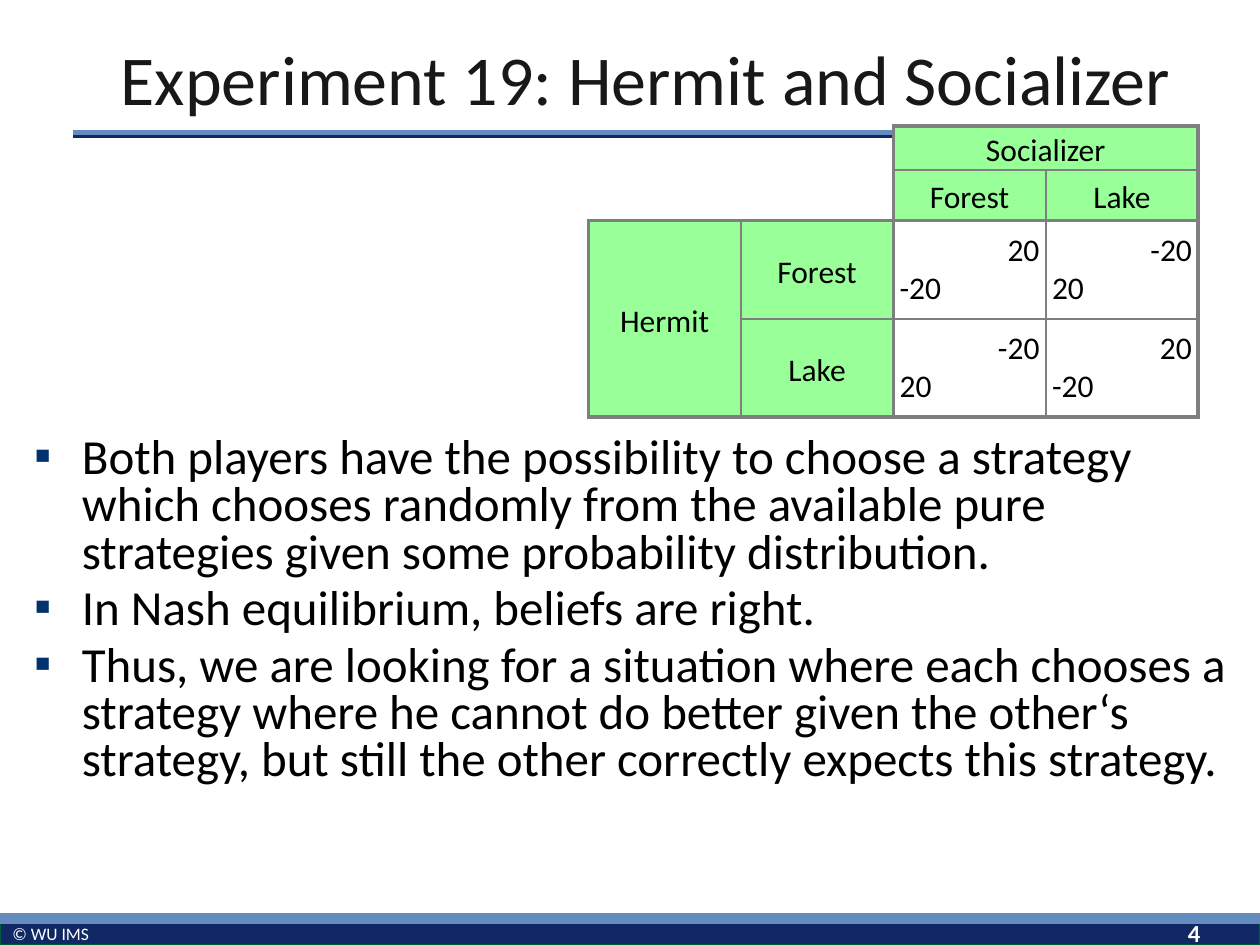
"""Build the Hermit and Socializer slide with its payoff table."""
from dataclasses import dataclass

from lxml.etree import SubElement
from pptx import Presentation
from pptx.dml.color import RGBColor
from pptx.enum.shapes import MSO_CONNECTOR as Connector, MSO_SHAPE as Shape
from pptx.enum.text import MSO_ANCHOR as Anchor, MSO_AUTO_SIZE as AutoSize, PP_ALIGN as Align
from pptx.oxml.ns import qn
from pptx.util import Inches, Pt

NAVY = RGBColor(0x10, 0x28, 0x63)
SKY = RGBColor(0x65, 0x8C, 0xBF)
DARK_GREEN = RGBColor(0x00, 0x5F, 0x3B)
LIGHT_GREEN = RGBColor(0x99, 0xFF, 0x99)
GRAY = RGBColor(0x7F, 0x7F, 0x7F)
BULLET_BLUE = RGBColor(0x01, 0x32, 0x6D)
CHARCOAL = RGBColor(0x1A, 0x17, 0x18)
BLACK = RGBColor(0, 0, 0)
WHITE = RGBColor(0xFF, 0xFF, 0xFF)
FONT = "Calibri"
THICK, THIN = Pt(2.25), Pt(1.5)


@dataclass
class Bar:
    top: float
    height: float
    fill: RGBColor
    line: RGBColor


@dataclass
class Rule:
    top: float
    color: RGBColor


@dataclass
class Label:
    text: str
    left: float
    top: float
    width: float
    height: float
    size: int
    bold: bool = False


@dataclass
class Header:
    text: str
    row: int
    column: int
    rows: int = 1
    columns: int = 1


@dataclass
class Payoff:
    row: int
    column: int
    socializer: str
    hermit: str


BARS = [Bar(7.33, 0.17, NAVY, DARK_GREEN), Bar(7.25, 0.08, SKY, SKY)]
RULES = [Rule(1.08, NAVY), Rule(1.05, SKY)]
LABELS = [
    Label("© WU IMS", 0, 7.28, 1.08, 0.23, 10),
    Label("4", 9.33, 7.24, 0.67, 0.26, 14, True),
]
BULLETS = [
    "Both players have the possibility to choose a strategy which chooses randomly "
    "from the available pure strategies given some probability distribution.",
    "In Nash equilibrium, beliefs are right.",
    "Thus, we are looking for a situation where each chooses a strategy where he cannot "
    "do better given the other‘s strategy, but still the other correctly expects this strategy.",
]
HEADERS = [
    Header("Socializer", 0, 2, columns=2),
    Header("Forest", 1, 2),
    Header("Lake", 1, 3),
    Header("Hermit", 2, 0, rows=2),
    Header("Forest", 2, 1),
    Header("Lake", 3, 1),
]
PAYOFFS = [
    Payoff(2, 2, "20", "-20"),
    Payoff(2, 3, "-20", "20"),
    Payoff(3, 2, "-20", "20"),
    Payoff(3, 3, "20", "-20"),
]


def place(shape, left: float, top: float, width: float, height: float) -> None:
    shape.left, shape.top = Inches(left), Inches(top)
    shape.width, shape.height = Inches(width), Inches(height)


def add_span(para, text: str, size: int, color: RGBColor, bold: bool = False) -> None:
    span = para.add_run()
    span.text = text
    font = span.font
    font.name, font.size, font.bold = FONT, Pt(size), bold
    font.color.rgb = color


def draw_bar(page, bar: Bar) -> None:
    box = page.shapes.add_shape(
        Shape.RECTANGLE, 0, Inches(bar.top), Inches(10), Inches(bar.height))
    box.shadow.inherit = False
    box.fill.solid()
    box.fill.fore_color.rgb = bar.fill
    box.line.color.rgb = bar.line
    box.line.width = Pt(0.75)


def draw_rule(page, rule: Rule) -> None:
    line = page.shapes.add_connector(
        Connector.STRAIGHT, Inches(0.58), Inches(rule.top), Inches(9.42), Inches(rule.top))
    line.line.color.rgb = rule.color
    line.line.width = Pt(2.75)
    SubElement(line._element.spPr, qn("a:effectLst"))


def draw_label(page, label: Label) -> None:
    box = page.shapes.add_textbox(0, 0, 0, 0)
    place(box, label.left, label.top, label.width, label.height)
    box.text_frame.word_wrap = True
    add_span(box.text_frame.paragraphs[0], label.text, label.size, WHITE, label.bold)


def fill_title(title) -> None:
    place(title, 0.75, 0.17, 8.75, 0.83)
    frame = title.text_frame
    frame.auto_size = AutoSize.NONE
    frame.vertical_anchor = Anchor.BOTTOM
    para = frame.paragraphs[0]
    para.alignment = Align.CENTER
    add_span(para, "Experiment 19: Hermit and Socializer", 40, CHARCOAL)


def fill_body(body) -> None:
    place(body, 0.17, 3.42, 9.83, 3.92)
    frame = body.text_frame
    frame.auto_size = AutoSize.NONE
    for index, text in enumerate(BULLETS):
        para = frame.add_paragraph() if index else frame.paragraphs[0]
        para.line_spacing = 0.8
        para.space_before = Pt(5.6 if index else 0)
        properties = para._p.get_or_add_pPr()
        properties.set("marL", str(Inches(0.38)))
        properties.set("indent", str(Inches(-0.38)))
        color = SubElement(properties, qn("a:buClr"))
        SubElement(color, qn("a:srgbClr"), val=str(BULLET_BLUE))
        SubElement(properties, qn("a:buFont"), typeface="Arial")
        SubElement(properties, qn("a:buChar"), char="▪")
        add_span(para, text, 28, BLACK)


def set_borders(cell, row: int, column: int, rows: int = 1, columns: int = 1) -> None:
    edges = {"L": column, "R": column + columns, "T": row, "B": row + rows}
    corner = row == column == 0
    properties = cell._tc.get_or_add_tcPr()
    for side, edge in edges.items():
        width = THIN if edge % 2 else THICK
        line = SubElement(properties, qn(f"a:ln{side}"), w=str(width))
        if corner and edge == 0:
            SubElement(line, qn("a:noFill"))
        else:
            fill = SubElement(line, qn("a:solidFill"))
            SubElement(fill, qn("a:srgbClr"), val=str(GRAY))


def set_margins(cell, margin: float) -> None:
    cell.margin_left = cell.margin_right = Inches(margin)
    cell.margin_top = cell.margin_bottom = Inches(margin)
    cell.vertical_anchor = Anchor.MIDDLE


def fill_header(table, header: Header) -> None:
    cell = table.cell(header.row, header.column)
    if header.rows * header.columns > 1:
        cell.merge(table.cell(header.row + header.rows - 1, header.column + header.columns - 1))
    set_margins(cell, 0)
    set_borders(cell, header.row, header.column, header.rows, header.columns)
    cell.fill.solid()
    cell.fill.fore_color.rgb = LIGHT_GREEN
    para = cell.text_frame.paragraphs[0]
    para.alignment = Align.CENTER
    para.line_spacing = 1.15
    para.space_after = Pt(4)
    add_span(para, header.text, 18, BLACK)


def fill_payoff(table, payoff: Payoff) -> None:
    cell = table.cell(payoff.row, payoff.column)
    set_margins(cell, 0.05)
    set_borders(cell, payoff.row, payoff.column)
    cell.fill.background()
    first, second = cell.text_frame.paragraphs[0], cell.text_frame.add_paragraph()
    first.alignment, second.alignment = Align.RIGHT, Align.LEFT
    add_span(first, payoff.socializer, 18, BLACK)
    add_span(second, payoff.hermit, 18, BLACK)


def draw_table(page) -> None:
    table = page.shapes.add_table(
        4, 4, Inches(4.67), Inches(1), Inches(4.84), Inches(2.26)).table
    table.first_row = table.horz_banding = False
    for row, height in zip(table.rows, (0.35, 0.35, 0.78, 0.78)):
        row.height = Inches(height)
    corner = table.cell(0, 0)
    corner.merge(table.cell(1, 1))
    set_borders(corner, 0, 0, 2, 2)
    corner.fill.background()
    for header in HEADERS:
        fill_header(table, header)
    for payoff in PAYOFFS:
        fill_payoff(table, payoff)


def main() -> None:
    deck = Presentation()
    deck.slide_width, deck.slide_height = Inches(10), Inches(7.5)
    page = deck.slides.add_slide(deck.slide_layouts[1])
    fill_title(page.shapes.title)
    fill_body(page.placeholders[1])
    for bar in BARS:
        draw_bar(page, bar)
    for rule in RULES:
        draw_rule(page, rule)
    for label in LABELS:
        draw_label(page, label)
    draw_table(page)
    deck.save("out.pptx")


if __name__ == "__main__":
    main()
